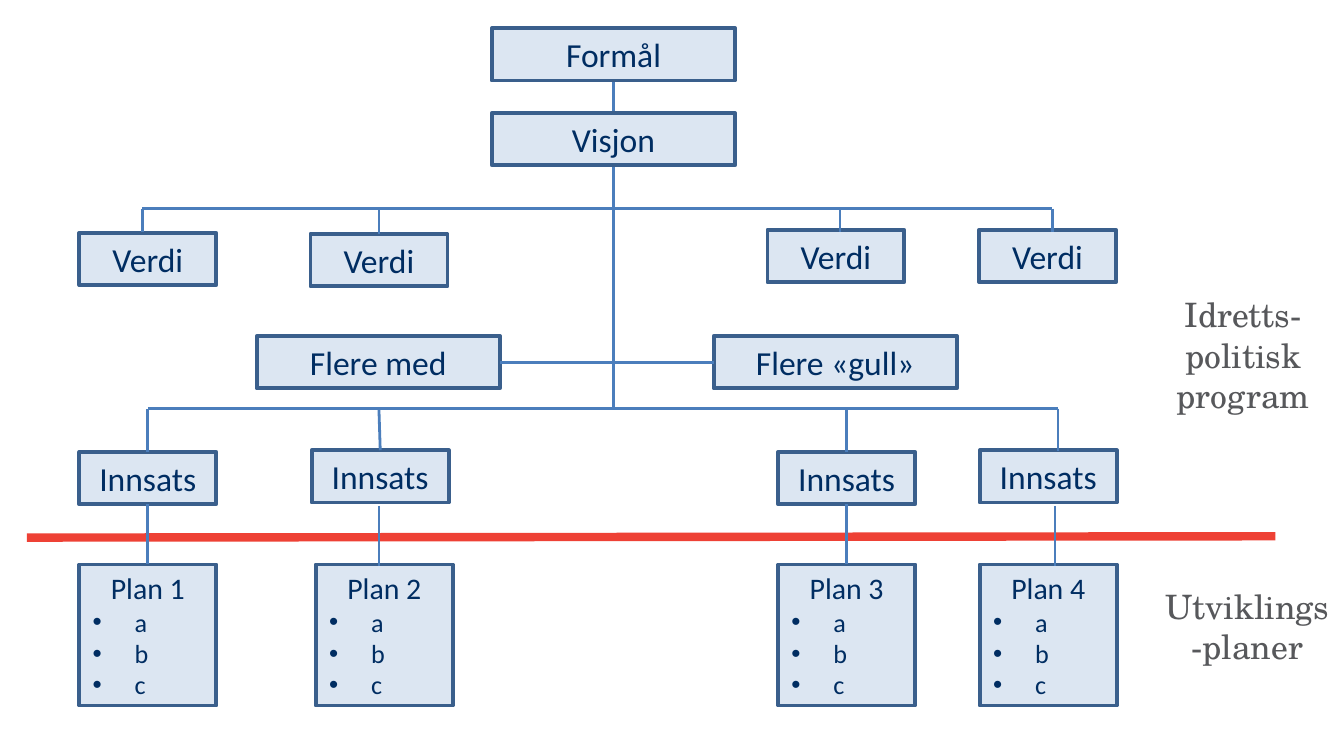
from dataclasses import dataclass
from typing import Any

from lxml import etree
from pptx import Presentation
from pptx import util as u
from pptx.dml.color import RGBColor
from pptx.enum import shapes, text
from pptx.oxml import ns

# Colours
BOX_FILL = RGBColor(0xDC, 0xE6, 0xF2)
BOX_EDGE = RGBColor(0x3A, 0x5F, 0x8C)
NAVY = RGBColor(0x00, 0x2D, 0x62)
BLUE = RGBColor(0x4B, 0x7E, 0xBC)
RED = RGBColor(0xEE, 0x41, 0x35)
GREY = RGBColor(0x57, 0x58, 0x5B)

# Sizes in points
WIDE, NARROW, LOW, TALL = 130.3, 73.4, 28.1, 75.6
TOP, LEFT, BOTTOM, RIGHT = range(4)
BOX_FONT = {"name": "Calibri", "size": u.Pt(18)}
PLAN_FONT = {"name": "Calibri", "size": u.Pt(16)}
ITEM_FONT = {"name": "Calibri", "size": u.Pt(14)}
LABEL_FONT = {"name": "TeX Gyre Schola", "size": u.Pt(18)}
BOX_FRAME = {"word_wrap": True, "vertical_anchor": text.MSO_ANCHOR.MIDDLE}
LABEL_FRAME = {"word_wrap": True, "auto_size": text.MSO_AUTO_SIZE.SHAPE_TO_FIT_TEXT}


@dataclass
class Box:
    title: str
    left: float
    top: float
    width: float = NARROW
    height: float = LOW
    items: tuple[str, ...] = ()


@dataclass
class Line:
    x1: float
    y1: float
    x2: float
    y2: float
    color: RGBColor = BLUE
    weight: float = 1.5


def set_values(target: Any, values: dict[str, Any]) -> None:
    for name, value in values.items():
        setattr(target, name, value)


def write(para: Any, words: str, font: dict[str, Any], color: RGBColor,
          align: Any = text.PP_ALIGN.CENTER) -> None:
    para.alignment = align
    span = para.add_run()
    span.text = words
    set_values(span.font, font)
    span.font.color.rgb = color


def add_bullet(para: Any) -> None:
    props = para._p.get_or_add_pPr()
    props.set("marL", str(u.Pt(22.5)))
    props.set("indent", str(-u.Pt(22.5)))
    etree.SubElement(props, ns.qn("a:buFont")).set("typeface", "Arial")
    etree.SubElement(props, ns.qn("a:buChar")).set("char", "•")


def draw_box(page: Any, box: Box) -> Any:
    shape = page.shapes.add_shape(
        shapes.MSO_SHAPE.RECTANGLE,
        u.Pt(box.left), u.Pt(box.top), u.Pt(box.width), u.Pt(box.height))
    shape.shadow.inherit = False
    shape.fill.solid()
    shape.fill.fore_color.rgb = BOX_FILL
    shape.line.color.rgb = BOX_EDGE
    shape.line.width = u.Pt(2)
    frame = shape.text_frame
    set_values(frame, BOX_FRAME)
    write(frame.paragraphs[0], box.title, PLAN_FONT if box.items else BOX_FONT, NAVY)
    for item in box.items:
        para = frame.add_paragraph()
        add_bullet(para)
        write(para, item, ITEM_FONT, NAVY, text.PP_ALIGN.LEFT)
    return shape


def draw_line(page: Any, line: Line) -> Any:
    connector = page.shapes.add_connector(
        shapes.MSO_CONNECTOR.STRAIGHT,
        u.Pt(line.x1), u.Pt(line.y1), u.Pt(line.x2), u.Pt(line.y2))
    connector.line.color.rgb = line.color
    connector.line.width = u.Pt(line.weight)
    etree.SubElement(connector._element.spPr, ns.qn("a:effectLst"))
    return connector


def draw_label(page: Any, words: str, left: float, top: float, height: float) -> None:
    label = page.shapes.add_textbox(u.Pt(left), u.Pt(top), u.Pt(103.7), u.Pt(height))
    set_values(label.text_frame, LABEL_FRAME)
    write(label.text_frame.paragraphs[0], words, LABEL_FONT, GREY)


def main() -> None:
    deck = Presentation()
    set_values(deck, {"slide_width": u.Pt(720), "slide_height": u.Pt(405)})
    page = deck.slides.add_slide(deck.slide_layouts[6])

    # Trunk, behind the boxes
    trunk = draw_line(page, Line(328.7, 43.2, 328.7, 219.6))

    # Purpose, vision and the two main goals
    purpose = draw_box(page, Box("Formål", 263.5, 15.1, WIDE))
    draw_box(page, Box("Visjon", 263.5, 60.5, WIDE))
    more_people = draw_box(page, Box("Flere med", 137.5, 180, WIDE))
    more_gold = draw_box(page, Box("Flere «gull»", 382.3, 180, WIDE))
    trunk.begin_connect(purpose, BOTTOM)

    # Rows of values, efforts and plans
    values = [draw_box(page, Box("Verdi", left, top)) for left, top in
              ((42.5, 124.7), (166.3, 125.3), (411.1, 123.1), (524.5, 123.1))]
    efforts = [draw_box(page, Box("Innsats", left, top)) for left, top in
               ((42.5, 242.1), (167, 241.2), (416.9, 242.1), (524.9, 241.2))]
    plans = [draw_box(page, Box(f"Plan {number}", left, 302.4, NARROW, TALL, ("a", "b", "c")))
             for number, left in enumerate((42.5, 169.2, 416.9, 524.9), 1)]

    # Horizontal bars and the dividing line
    draw_line(page, Line(76.3, 111.8, 563.8, 111.8))
    draw_line(page, Line(79.2, 218.9, 566.8, 218.9))
    draw_line(page, Line(14.4, 288, 683.3, 287.3, RED, 4.5))

    # Link between the goals
    link = draw_line(page, Line(267.8, 194, 382.3, 194))
    link.begin_connect(more_people, RIGHT)
    link.end_connect(more_gold, LEFT)

    # Drops from the bars; centred ones are joined to their box
    drops = (
        (values, 111.8, 124.2, (76.3, 203, 450, 563.8), {1}),
        (efforts, 218.9, 241.9, (79.2, 203, 453.6, 566.8), {0, 1, 2}),
    )
    for row, start, end, centres, joined in drops:
        for index, x in enumerate(centres):
            drop = draw_line(page, Line(x, start, x, end))
            if index in joined:
                drop.end_connect(row[index], TOP)

    # Efforts to plans
    for index, x in enumerate((79.2, 203, 454, 565.2)):
        stem = draw_line(page, Line(x, 271, x, 303))
        if index in {0, 2}:
            stem.begin_connect(efforts[index], BOTTOM)
            stem.end_connect(plans[index], TOP)

    # Side labels
    draw_label(page, "Utviklings-planer", 616.3, 310.3, 51.1)
    draw_label(page, "Idretts-politisk program", 614.2, 154.1, 72.7)

    deck.save("out.pptx")


if __name__ == "__main__":
    main()
